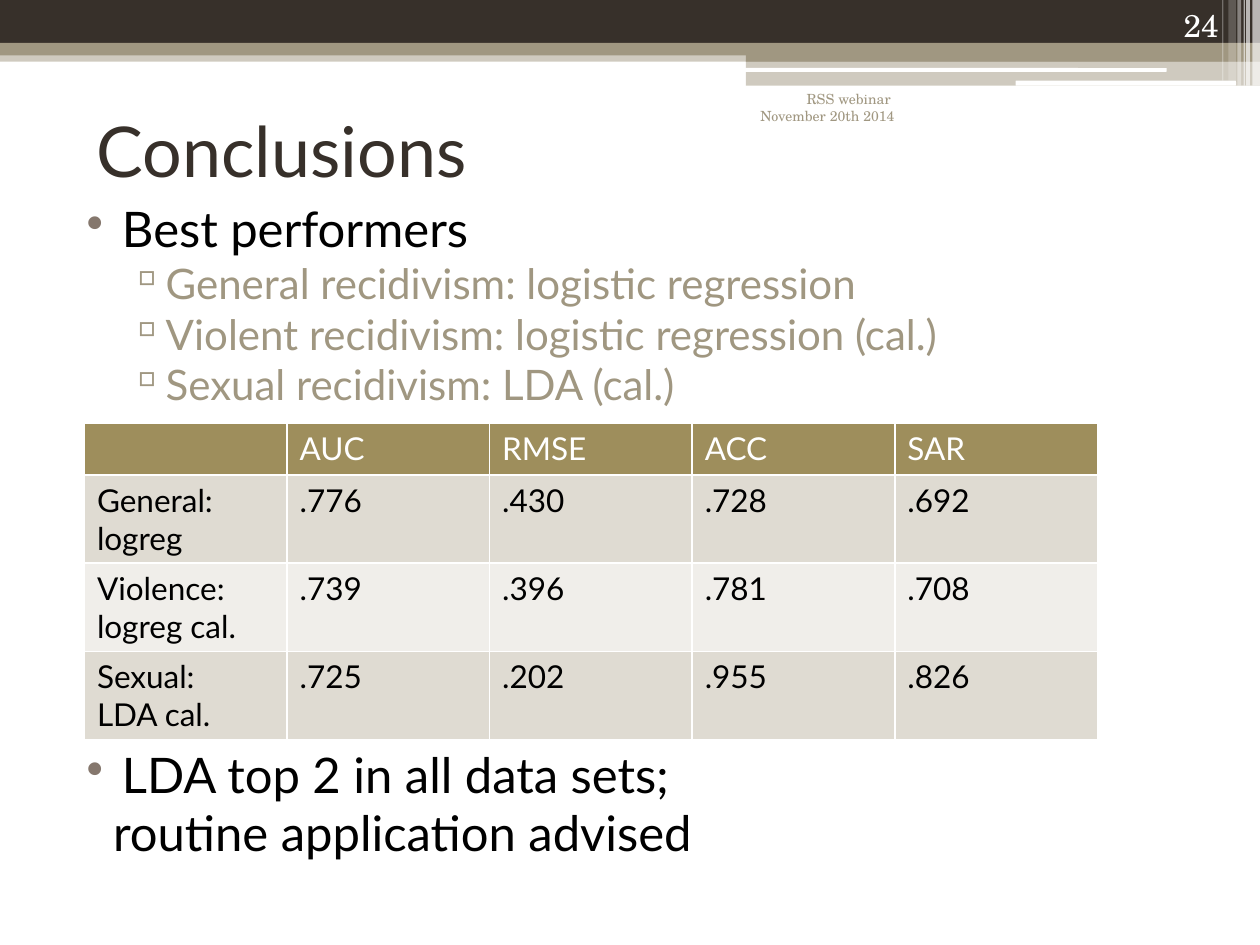
from dataclasses import dataclass
from typing import Optional

from lxml.etree import SubElement
from pptx import Presentation
from pptx.dml.color import RGBColor
from pptx.enum.shapes import MSO_SHAPE
from pptx.enum.text import MSO_ANCHOR, PP_ALIGN
from pptx.oxml.ns import qn
from pptx.util import Inches, Pt

WHITE = RGBColor(0xFF, 0xFF, 0xFF)
BLACK = RGBColor(0x00, 0x00, 0x00)
DARK = RGBColor(0x37, 0x30, 0x2A)
TAN = RGBColor(0xA0, 0x97, 0x81)
BULLET_BROWN = RGBColor(0x85, 0x77, 0x6D)
HEADER_OLIVE = RGBColor(0x9E, 0x8E, 0x5C)
BAND_DARK = RGBColor(0xDF, 0xDB, 0xD2)
BAND_LIGHT = RGBColor(0xF0, 0xEE, 0xEA)
SANS = "Lato"
SERIF = "TeX Gyre Schola"


@dataclass(frozen=True)
class Bar:
    left: float
    top: float
    width: float
    height: float
    color: RGBColor
    opacity: int = 100
    rounded: bool = False


@dataclass(frozen=True)
class Style:
    size: float
    color: RGBColor
    font: str = SANS
    align: PP_ALIGN = PP_ALIGN.LEFT
    margin: float = 0
    indent: float = 0
    bullet: str = ""
    bullet_color: Optional[RGBColor] = None
    spacing: Optional[float] = None
    before: float = 0


POINT = Style(28, BLACK, margin=0.4, indent=-0.28, bullet="•",
              bullet_color=BULLET_BROWN, spacing=0.9, before=3)
SUBPOINT = Style(24, TAN, margin=0.72, indent=-0.27, bullet="▫",
                 bullet_color=TAN, spacing=0.9, before=3)
CONTINUATION = Style(28, BLACK, margin=0.33, spacing=0.9, before=3)
TITLE = Style(40, DARK)
FOOTER = Style(8, TAN, SERIF, PP_ALIGN.RIGHT)
PAGE_NUMBER = Style(18, WHITE, SERIF, PP_ALIGN.RIGHT)
HEADER_CELL = Style(18, WHITE)
BODY_CELL = Style(18, BLACK)

BANNER = [
    Bar(0, 0.4, 10, 0.09, TAN, 50),
    Bar(0, 0, 10, 0.34, DARK),
    Bar(0, 0.34, 10, 0.1, TAN),
    Bar(5.92, 0.39, 4.08, 0.1, TAN),
    Bar(5.92, 0.48, 4.08, 0.2, TAN, 50),
    Bar(5.91, 0.54, 3.35, 0.03, WHITE, rounded=True),
    Bar(8.06, 0.64, 1.75, 0.04, WHITE, rounded=True),
    Bar(9.94, 0, 0.06, 0.68, WHITE, 65),
    Bar(9.89, 0, 0.03, 0.68, WHITE, 65),
    Bar(9.87, 0, 0.01, 0.68, WHITE, 60),
    Bar(9.82, 0, 0.03, 0.68, WHITE, 40),
    Bar(9.75, 0, 0.06, 0.64, WHITE, 20),
    Bar(9.7, 0, 0.01, 0.64, WHITE, 30),
]
SCORES = [
    ["", "AUC", "RMSE", "ACC", "SAR"],
    ["General: logreg", ".776", ".430", ".728", ".692"],
    ["Violence: logreg cal.", ".739", ".396", ".781", ".708"],
    ["Sexual: \nLDA cal.", ".725", ".202", ".955", ".826"],
]


def draw_bar(slide, bar: Bar) -> None:
    preset = MSO_SHAPE.ROUNDED_RECTANGLE if bar.rounded else MSO_SHAPE.RECTANGLE
    shape = slide.shapes.add_shape(preset, Inches(bar.left), Inches(bar.top),
                                   Inches(bar.width), Inches(bar.height))
    shape.shadow.inherit = False
    shape.line.fill.background()
    shape.fill.solid()
    shape.fill.fore_color.rgb = bar.color
    if bar.opacity < 100:
        color = shape.fill._xPr.find(qn("a:solidFill"))[0]
        SubElement(color, qn("a:alpha"), val=str(bar.opacity * 1000))


def write_paragraph(paragraph, text: str, style: Style) -> None:
    paragraph.alignment = style.align
    paragraph.line_spacing = style.spacing
    paragraph.space_before = Pt(style.before)
    properties = paragraph._p.get_or_add_pPr()
    properties.set("marL", str(Inches(style.margin)))
    properties.set("indent", str(Inches(style.indent)))
    if style.bullet:
        bullet_color = SubElement(properties, qn("a:buClr"))
        SubElement(bullet_color, qn("a:srgbClr"), val=str(style.bullet_color))
        SubElement(properties, qn("a:buChar"), char=style.bullet)
    for index, line in enumerate(text.split("\n")):
        if index:
            paragraph.add_line_break()
        run = paragraph.add_run()
        run.text = line
        run.font.size = Pt(style.size)
        run.font.name = style.font
        run.font.color.rgb = style.color


def draw_text(slide, left: float, top: float, width: float, height: float,
              content: list[tuple[str, Style]],
              anchor: MSO_ANCHOR = MSO_ANCHOR.TOP) -> None:
    frame = slide.shapes.add_textbox(Inches(left), Inches(top),
                                     Inches(width), Inches(height)).text_frame
    frame.word_wrap = True
    frame.vertical_anchor = anchor
    for index, (text, style) in enumerate(content):
        paragraph = frame.add_paragraph() if index else frame.paragraphs[0]
        write_paragraph(paragraph, text, style)


def style_cell(cell, fill: RGBColor) -> None:
    properties = cell._tc.get_or_add_tcPr()
    for side in ("lnL", "lnR", "lnT", "lnB"):
        border = SubElement(properties, qn(f"a:{side}"), w=str(Pt(1)))
        border_fill = SubElement(border, qn("a:solidFill"))
        SubElement(border_fill, qn("a:srgbClr"), val=str(WHITE))
    cell.fill.solid()
    cell.fill.fore_color.rgb = fill


def draw_scores(slide) -> None:
    table = slide.shapes.add_table(len(SCORES), len(SCORES[0]), Inches(0.67),
                                   Inches(3.36), Inches(8.04), Inches(2.51)).table
    for row_index, scores in enumerate(SCORES):
        is_header = row_index == 0
        table.rows[row_index].height = Inches(0.41 if is_header else 0.7)
        band = BAND_DARK if row_index % 2 else BAND_LIGHT
        for column_index, score in enumerate(scores):
            cell = table.cell(row_index, column_index)
            style_cell(cell, HEADER_OLIVE if is_header else band)
            if score:
                write_paragraph(cell.text_frame.paragraphs[0], score,
                                HEADER_CELL if is_header else BODY_CELL)


def main() -> None:
    """Build the conclusions slide with its table of best performers."""
    presentation = Presentation()
    presentation.slide_width = Inches(10)
    presentation.slide_height = Inches(7.5)
    slide = presentation.slides.add_slide(presentation.slide_layouts[6])
    for bar in BANNER:
        draw_bar(slide, bar)
    draw_text(slide, 5.75, 0.67, 1.45, 0.5,
              [("RSS webinar ", FOOTER), ("November 20th 2014", FOOTER)])
    draw_text(slide, 0.67, 0.6, 9, 1.17, [("Conclusions", TITLE)], MSO_ANCHOR.MIDDLE)
    draw_text(slide, 0.47, 1.58, 9, 1.75, [
        ("Best performers", POINT),
        ("General recidivism: logistic regression", SUBPOINT),
        ("Violent recidivism: logistic regression (cal.)", SUBPOINT),
        ("Sexual recidivism: LDA (cal.)", SUBPOINT),
    ])
    draw_scores(slide)
    draw_text(slide, 0.47, 5.91, 9, 1.18, [
        ("LDA top 2 in all data sets;", POINT),
        ("routine application advised", CONTINUATION),
    ])
    draw_text(slide, 8.94, 0, 0.83, 0.4, [("24", PAGE_NUMBER)], MSO_ANCHOR.BOTTOM)
    presentation.save("out.pptx")


if __name__ == "__main__":
    main()
